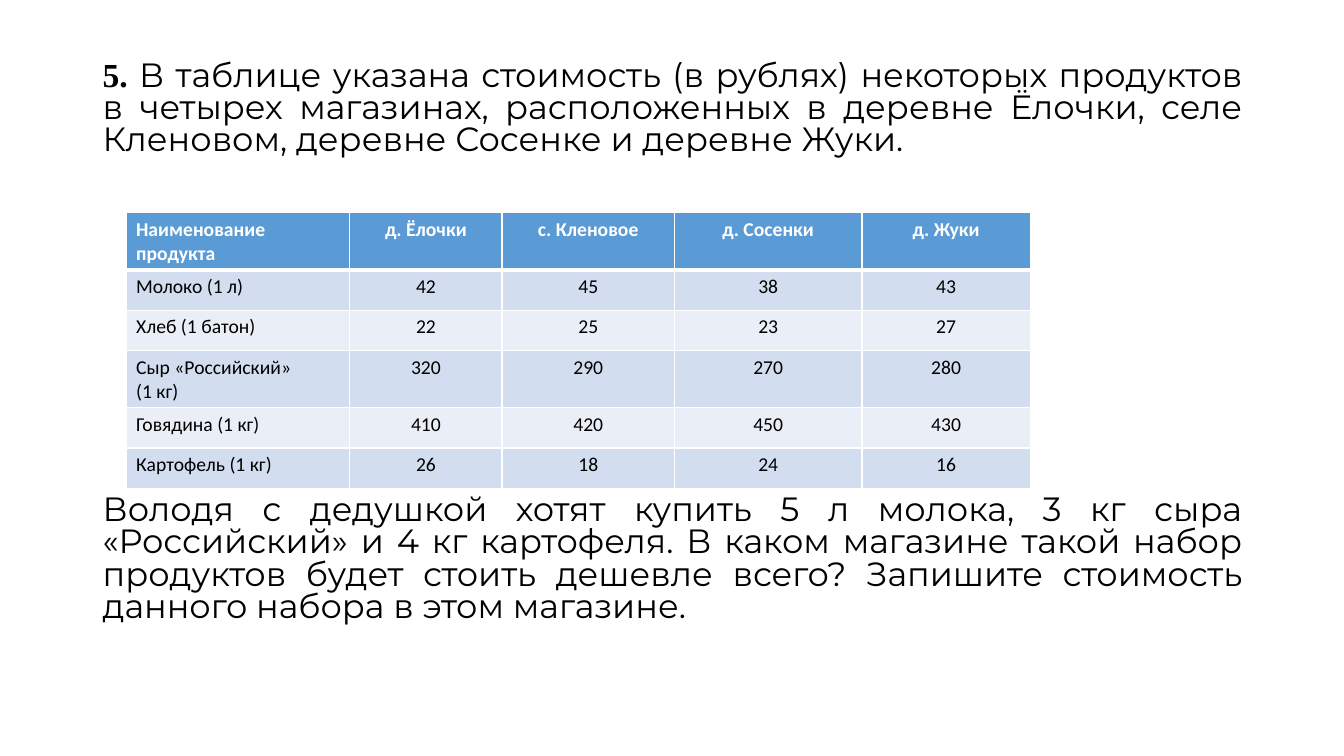
from lxml import etree
from pptx import Presentation
from pptx.dml.color import RGBColor
from pptx.enum.text import PP_ALIGN
from pptx.oxml.ns import qn
from pptx.util import Inches, Pt

BLACK = RGBColor(0x00, 0x00, 0x00)
WHITE = RGBColor(0xFF, 0xFF, 0xFF)
HEADER_BLUE = RGBColor(0x5B, 0x9B, 0xD5)
BANDS = (RGBColor(0xEA, 0xEF, 0xF7), RGBColor(0xD2, 0xDE, 0xEF))

INTRO = [
    ("5. ", "Times New Roman", True),
    ("В таблице указана стоимость (в рублях) некоторых продуктов в четырех "
     "магазинах, расположенных в деревне Ёлочки, селе Кленовом, деревне "
     "Сосенке и деревне Жуки.", "Montserrat", False),
]
QUESTION = [
    ("Володя с дедушкой хотят купить 5 л молока, 3 кг сыра «Российский» и "
     "4 кг картофеля. В каком магазине такой набор продуктов будет стоить "
     "дешевле всего? Запишите стоимость данного набора в этом магазине.",
     "Montserrat", False),
]
PRICES = [
    ("Наименование продукта", "д. Ёлочки", "с. Кленовое", "д. Сосенки", "д. Жуки"),
    ("Молоко (1 л)", 42, 45, 38, 43),
    ("Хлеб (1 батон)", 22, 25, 23, 27),
    ("Сыр «Российский»\n(1 кг)", 320, 290, 270, 280),
    ("Говядина (1 кг)", 410, 420, 450, 430),
    ("Картофель (1 кг)", 26, 18, 24, 16),
]
COLUMN_WIDTHS = (2.22, 1.51, 1.71, 1.86, 1.67)
ROW_HEIGHTS = (0.56, 0.4, 0.4, 0.56, 0.4, 0.4)


def add_passage(slide, left, top, width, height, pieces):
    """Add a justified paragraph; pieces are (text, font name, bold)."""
    box = slide.shapes.add_textbox(
        Inches(left), Inches(top), Inches(width), Inches(height))
    box.text_frame.word_wrap = True
    para = box.text_frame.paragraphs[0]
    para.alignment = PP_ALIGN.JUSTIFY
    para.line_spacing = 0.8
    for text, font_name, bold in pieces:
        span = para.add_run()
        span.text = text
        span.font.name = font_name
        span.font.size = Pt(24)
        span.font.bold = bold
        span.font.color.rgb = BLACK


def add_borders(cell, top, bottom):
    """Draw white cell borders; top and bottom are widths in points."""
    properties = cell._tc.get_or_add_tcPr()
    for side, width in (("L", 1), ("R", 1), ("T", top), ("B", bottom)):
        line = etree.SubElement(properties, qn(f"a:ln{side}"), w=str(Pt(width)))
        fill = etree.SubElement(line, qn("a:solidFill"))
        etree.SubElement(fill, qn("a:srgbClr"), val=str(WHITE))


def style_cell(cell, row, column):
    is_header = row == 0
    # Borders come before the fill in the cell properties.
    add_borders(cell, top=3 if row == 1 else 1, bottom=3 if is_header else 1)
    cell.fill.solid()
    cell.fill.fore_color.rgb = HEADER_BLUE if is_header else BANDS[row % 2]
    for para in cell.text_frame.paragraphs:
        para.alignment = PP_ALIGN.CENTER if column else PP_ALIGN.LEFT
        for span in para.runs:
            span.font.name = "Calibri"
            span.font.size = Pt(14)
            span.font.bold = is_header
            span.font.color.rgb = WHITE if is_header else BLACK


def add_price_table(slide, left, top):
    table = slide.shapes.add_table(
        len(PRICES), len(COLUMN_WIDTHS), Inches(left), Inches(top),
        Inches(sum(COLUMN_WIDTHS)), Inches(sum(ROW_HEIGHTS))).table
    for column, width in zip(table.columns, COLUMN_WIDTHS):
        column.width = Inches(width)
    for row, height in zip(table.rows, ROW_HEIGHTS):
        row.height = Inches(height)
    for row, values in enumerate(PRICES):
        for column, value in enumerate(values):
            cell = table.cell(row, column)
            cell.text_frame.text = str(value)
            style_cell(cell, row, column)


def main():
    deck = Presentation()
    deck.slide_width = Inches(13.33)
    deck.slide_height = Inches(7.5)
    slide = deck.slides.add_slide(deck.slide_layouts[6])
    add_passage(slide, 0.92, 0.56, 11.5, 1.1, INTRO)
    add_price_table(slide, 1.25, 2.11)
    add_passage(slide, 0.92, 4.87, 11.5, 1.4, QUESTION)
    deck.save("out.pptx")


if __name__ == "__main__":
    main()
